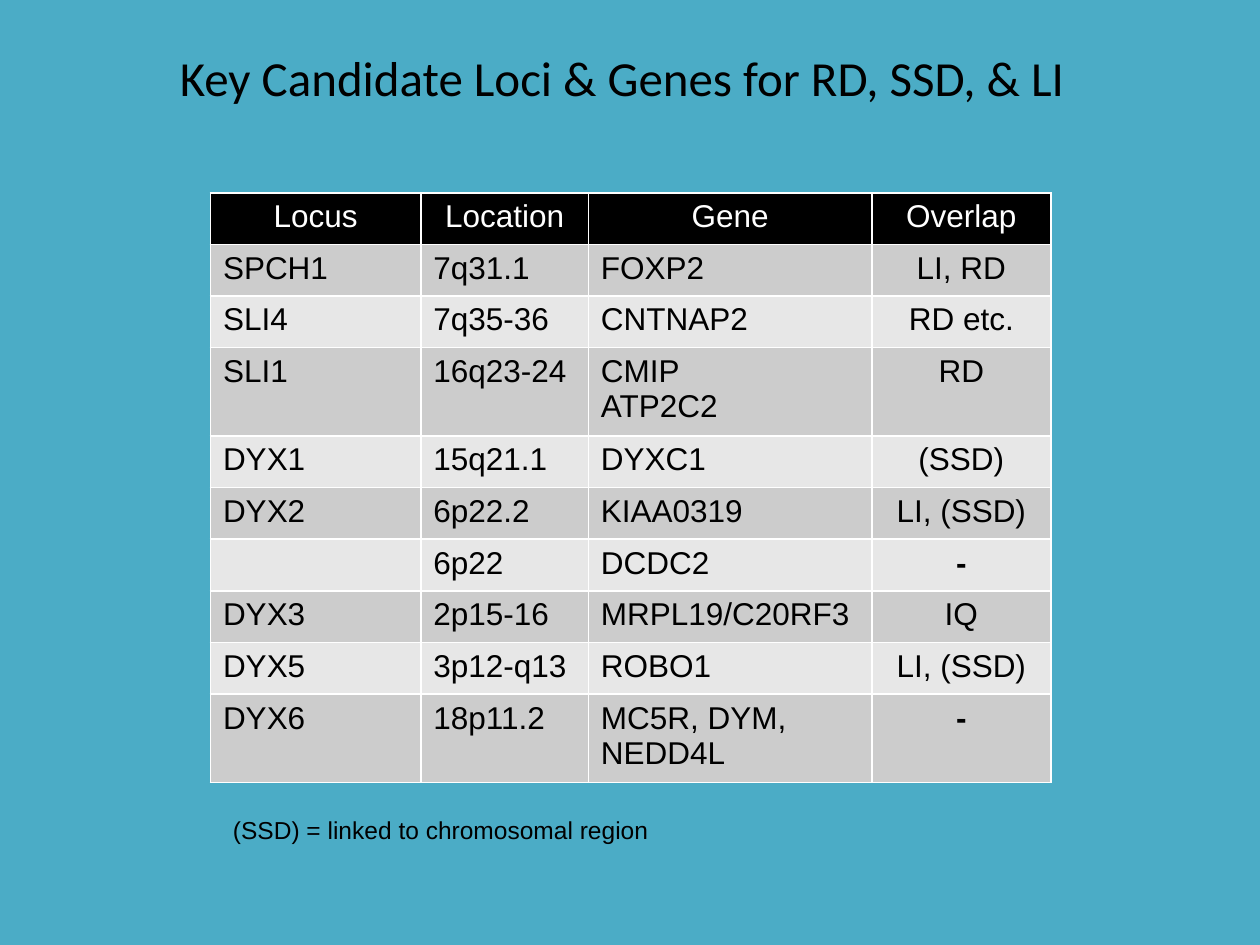
from dataclasses import dataclass
from typing import NamedTuple

from lxml.etree import SubElement
from pptx import Presentation
from pptx.dml.color import RGBColor
from pptx.enum.text import MSO_AUTO_SIZE, PP_ALIGN
from pptx.oxml.ns import qn
from pptx.util import Inches, Pt


@dataclass(frozen=True)
class Theme:
    background: RGBColor = RGBColor(0x4B, 0xAC, 0xC6)
    ink: RGBColor = RGBColor(0, 0, 0)
    paper: RGBColor = RGBColor(0xFF, 0xFF, 0xFF)
    odd_row: RGBColor = RGBColor(0xCC, 0xCC, 0xCC)
    even_row: RGBColor = RGBColor(0xE7, 0xE7, 0xE7)
    title_font: str = "Calibri"
    body_font: str = "Arial"
    title_size: int = 28
    table_size: int = 18
    note_size: int = 14
    border_width: int = 1


class Column(NamedTuple):
    heading: str
    width: float
    align: PP_ALIGN = PP_ALIGN.LEFT


class Finding(NamedTuple):
    locus: str
    location: str
    gene: str
    overlap: str
    height: float = 0.41


THEME = Theme()
HEADER_HEIGHT = 0.41
TALL_ROW = 0.7
NO_OVERLAP = "-"

COLUMNS = [
    Column("Locus", 1.67),
    Column("Location", 1.33),
    Column("Gene", 2.25),
    Column("Overlap", 1.42, PP_ALIGN.CENTER),
]

FINDINGS = [
    Finding("SPCH1", "7q31.1", "FOXP2", "LI, RD"),
    Finding("SLI4", "7q35-36", "CNTNAP2", "RD etc."),
    Finding("SLI1", "16q23-24", "CMIP\nATP2C2", "RD", TALL_ROW),
    Finding("DYX1", "15q21.1", "DYXC1", "(SSD)"),
    Finding("DYX2", "6p22.2", "KIAA0319", "LI, (SSD)"),
    Finding("", "6p22", "DCDC2", NO_OVERLAP),
    Finding("DYX3", "2p15-16", "MRPL19/C20RF3", "IQ"),
    Finding("DYX5", "3p12-q13", "ROBO1", "LI, (SSD)"),
    Finding("DYX6", "18p11.2", "MC5R, DYM, NEDD4L", NO_OVERLAP, TALL_ROW),
]


def write_text(frame, text: str, *, size: int, font: str = THEME.body_font,
               color: RGBColor = THEME.ink, bold: bool = False,
               align: PP_ALIGN = PP_ALIGN.LEFT) -> None:
    """Fill a text frame, one paragraph for each line of text."""
    frame.text = text
    frame.word_wrap = True
    for para in frame.paragraphs:
        para.alignment = align
        for span in para.runs:
            span.font.name = font
            span.font.size = Pt(size)
            span.font.bold = bold
            span.font.color.rgb = color


def add_text_box(slide, text: str, left: float, top: float, width: float,
                 height: float, **text_format) -> None:
    box = slide.shapes.add_textbox(Inches(left), Inches(top),
                                   Inches(width), Inches(height))
    write_text(box.text_frame, text, **text_format)
    box.text_frame.auto_size = MSO_AUTO_SIZE.SHAPE_TO_FIT_TEXT


def style_cell(cell, fill: RGBColor) -> None:
    """Give a cell its four borders, then its fill, in schema order."""
    properties = cell._tc.get_or_add_tcPr()
    for side in ("lnL", "lnR", "lnT", "lnB"):
        line = SubElement(properties, qn(f"a:{side}"),
                          w=str(Pt(THEME.border_width)))
        solid = SubElement(line, qn("a:solidFill"))
        SubElement(solid, qn("a:srgbClr"), val=str(THEME.paper))
    cell.fill.solid()
    cell.fill.fore_color.rgb = fill


def add_findings_table(slide, left: float, top: float) -> None:
    heights = [HEADER_HEIGHT] + [finding.height for finding in FINDINGS]
    width = sum(column.width for column in COLUMNS)
    table = slide.shapes.add_table(
        len(heights), len(COLUMNS), Inches(left), Inches(top),
        Inches(width), Inches(sum(heights))).table
    for row, height in zip(table.rows, heights):
        row.height = Inches(height)

    for column_index, column in enumerate(COLUMNS):
        table.columns[column_index].width = Inches(column.width)
        heading = table.cell(0, column_index)
        write_text(heading.text_frame, column.heading, size=THEME.table_size,
                   color=THEME.paper, align=PP_ALIGN.CENTER)
        style_cell(heading, THEME.ink)
        for row_index, finding in enumerate(FINDINGS, start=1):
            cell = table.cell(row_index, column_index)
            text = finding[column_index]
            write_text(cell.text_frame, text, size=THEME.table_size,
                       bold=text == NO_OVERLAP, align=column.align)
            style_cell(cell, THEME.odd_row if row_index % 2 else THEME.even_row)


def main() -> None:
    deck = Presentation()
    deck.slide_width, deck.slide_height = Inches(10), Inches(7.5)
    slide = deck.slides.add_slide(deck.slide_layouts[6])
    slide.background.fill.solid()
    slide.background.fill.fore_color.rgb = THEME.background

    add_text_box(slide, "Key Candidate Loci & Genes for RD, SSD, & LI",
                 1.33, 0.33, 7.67, 0.57,
                 size=THEME.title_size, font=THEME.title_font)
    add_findings_table(slide, 1.67, 1.53)
    add_text_box(slide, "(SSD) = linked to chromosomal region",
                 1.75, 6.42, 3.75, 0.34, size=THEME.note_size)
    deck.save("out.pptx")


if __name__ == "__main__":
    main()
